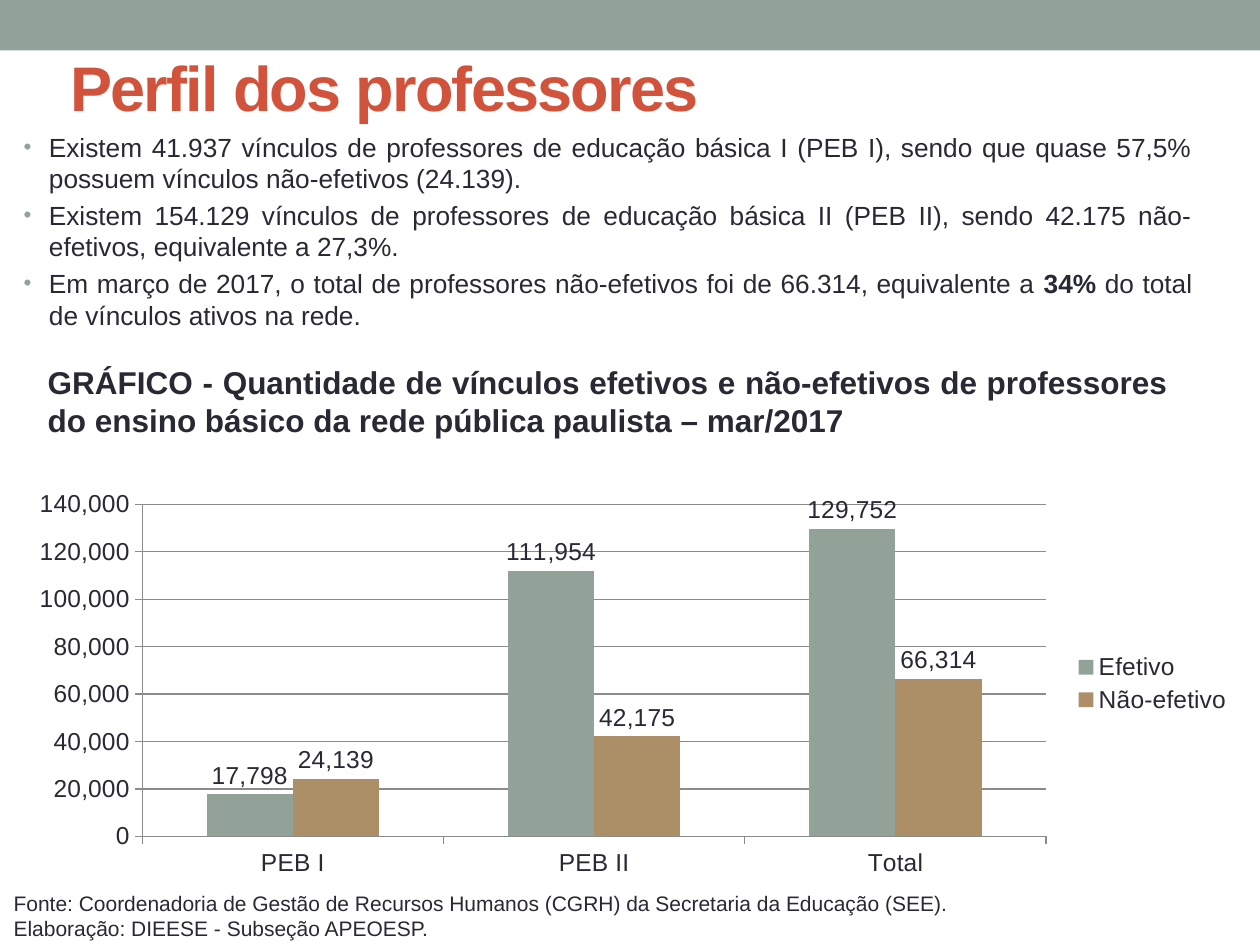
from dataclasses import dataclass

from lxml.etree import SubElement
from pptx import Presentation
from pptx.chart.data import CategoryChartData
from pptx.dml.color import RGBColor
from pptx.enum.chart import XL_CHART_TYPE as ChartType
from pptx.enum.chart import XL_LABEL_POSITION as LabelPosition
from pptx.enum.chart import XL_LEGEND_POSITION as LegendPosition
from pptx.enum.chart import XL_TICK_MARK as TickMark
from pptx.enum.shapes import MSO_SHAPE as Shape
from pptx.enum.text import MSO_ANCHOR as Anchor
from pptx.enum.text import PP_ALIGN as Align
from pptx.oxml.ns import qn
from pptx.util import Inches, Pt


@dataclass(frozen=True)
class Theme:
    font: str = "Arial"
    ink: str = "292934"
    sage: str = "93A299"
    tan: str = "AD8F67"
    red: str = "D2533C"
    grid: str = "8B8B8B"
    title: int = 36
    heading: int = 18
    body: int = 15
    chart: int = 14
    source: int = 12


THEME = Theme()

FINDINGS = [
    ["Existem 41.937 vínculos de professores de educação básica I (PEB I), "
     "sendo que quase 57,5% possuem vínculos não-efetivos (24.139)."],
    ["Existem 154.129 vínculos de professores de educação básica II (PEB II), "
     "sendo 42.175 não-efetivos, equivalente a 27,3%."],
    ["Em março de 2017, o total de professores não-efetivos foi de 66.314, "
     "equivalente a ", "34%", " do total de vínculos ativos na rede."],
]
HEADING = ("GRÁFICO - Quantidade de vínculos efetivos e não-efetivos de professores "
           "do ensino básico da rede pública paulista – mar/2017")
SOURCES = [
    "Fonte: Coordenadoria de Gestão de Recursos Humanos (CGRH) da Secretaria da Educação (SEE).",
    "Elaboração: DIEESE - Subseção APEOESP.",
]
LEVELS = ["PEB I", "PEB II", "Total"]
BONDS = [
    ("Efetivo", THEME.sage, [17798, 111954, 129752]),
    ("Não-efetivo", THEME.tan, [24139, 42175, 66314]),
]


def style(font, size, color=THEME.ink, bold=False):
    font.name = THEME.font
    font.size = Pt(size)
    font.bold = bold
    font.color.rgb = RGBColor.from_string(color)


def add_frame(slide, box):
    frame = slide.shapes.add_textbox(*map(Inches, box)).text_frame
    frame.word_wrap = True
    return frame


def paragraphs(frame, count):
    return [frame.paragraphs[0]] + [frame.add_paragraph() for _ in range(count - 1)]


def add_bullet(paragraph):
    props = paragraph._p.get_or_add_pPr()
    props.set("marL", str(Inches(0.2)))
    props.set("indent", str(Inches(-0.2)))
    color = SubElement(props, qn("a:buClr"))
    SubElement(color, qn("a:srgbClr"), val=THEME.sage)
    SubElement(props, qn("a:buSzPct"), val="85000")
    SubElement(props, qn("a:buFont"), typeface=THEME.font)
    SubElement(props, qn("a:buChar"), char="•")


def add_band(slide, box):
    band = slide.shapes.add_shape(Shape.RECTANGLE, *map(Inches, box))
    band.shadow.inherit = False
    band.fill.solid()
    band.fill.fore_color.rgb = RGBColor.from_string(THEME.sage)
    band.line.fill.background()


def add_title(slide, box, wording):
    frame = add_frame(slide, box)
    frame.vertical_anchor = Anchor.MIDDLE
    title = frame.paragraphs[0]
    style(title.font, THEME.title, THEME.red, True)
    run = title.add_run()
    run.text = wording
    run._r.get_or_add_rPr().set("spc", "-100")


def add_findings(slide, box, findings):
    frame = add_frame(slide, box)
    for index, (finding, parts) in enumerate(zip(paragraphs(frame, len(findings)), findings)):
        finding.alignment = Align.JUSTIFY
        finding.space_before = Pt(3 if index else 0)
        add_bullet(finding)
        style(finding.font, THEME.body)
        for position, part in enumerate(parts):
            run = finding.add_run()
            run.text = part
            if position == 1:
                run.font.bold = True


def add_heading(slide, box, wording):
    heading = add_frame(slide, box).paragraphs[0]
    heading.text = wording
    heading.alignment = Align.JUSTIFY
    style(heading.font, THEME.heading, bold=True)


def add_sources(slide, box, sources):
    frame = add_frame(slide, box)
    for credit, wording in zip(paragraphs(frame, len(sources)), sources):
        credit.text = wording
        style(credit.font, THEME.source)


def add_bonds_chart(slide, box):
    bonds = CategoryChartData(number_format="#,##0")
    bonds.categories = LEVELS
    for name, _, values in BONDS:
        bonds.add_series(name, values)
    chart = slide.shapes.add_chart(
        ChartType.COLUMN_CLUSTERED, *map(Inches, box), bonds).chart
    style(chart.font, THEME.chart)
    chart.has_title = False
    chart.has_legend = True
    chart.legend.position = LegendPosition.RIGHT
    chart.legend.include_in_layout = False

    grid = RGBColor.from_string(THEME.grid)
    scale = chart.value_axis
    scale.minimum_scale, scale.maximum_scale, scale.major_unit = 0, 140000, 20000
    scale.has_major_gridlines = True
    scale.tick_labels.number_format = "#,##0"
    scale.tick_labels.number_format_is_linked = False
    for line in (scale.major_gridlines.format.line, scale.format.line,
                 chart.category_axis.format.line):
        line.color.rgb = grid
        line.width = Pt(0.75)
    for axis in (scale, chart.category_axis):
        axis.major_tick_mark = TickMark.OUTSIDE

    plot = chart.plots[0]
    plot.gap_width = 150
    plot.overlap = 0
    plot.vary_by_categories = False
    for series, (_, color, _) in zip(plot.series, BONDS):
        series.format.fill.solid()
        series.format.fill.fore_color.rgb = RGBColor.from_string(color)
        labels = series.data_labels
        labels.show_value = True
        labels.number_format = "#,##0"
        labels.number_format_is_linked = False
        labels.position = LabelPosition.OUTSIDE_END
        style(labels.font, THEME.chart)


def main():
    deck = Presentation()
    deck.slide_width, deck.slide_height = Inches(10), Inches(7.5)
    slide = deck.slides.add_slide(deck.slide_layouts[6])
    add_band(slide, (0, 0, 10, 0.4))
    add_title(slide, (0.46, 0.36, 8.91, 0.65), "Perfil dos professores")
    add_findings(slide, (0.09, 0.99, 9.47, 1.57), FINDINGS)
    add_heading(slide, (0.28, 2.83, 9.09, 0.71), HEADING)
    add_sources(slide, (0.01, 7.02, 8.33, 0.5), SOURCES)
    add_bonds_chart(slide, (0.12, 3.83, 9.76, 3.19))
    deck.save("out.pptx")


if __name__ == "__main__":
    main()
